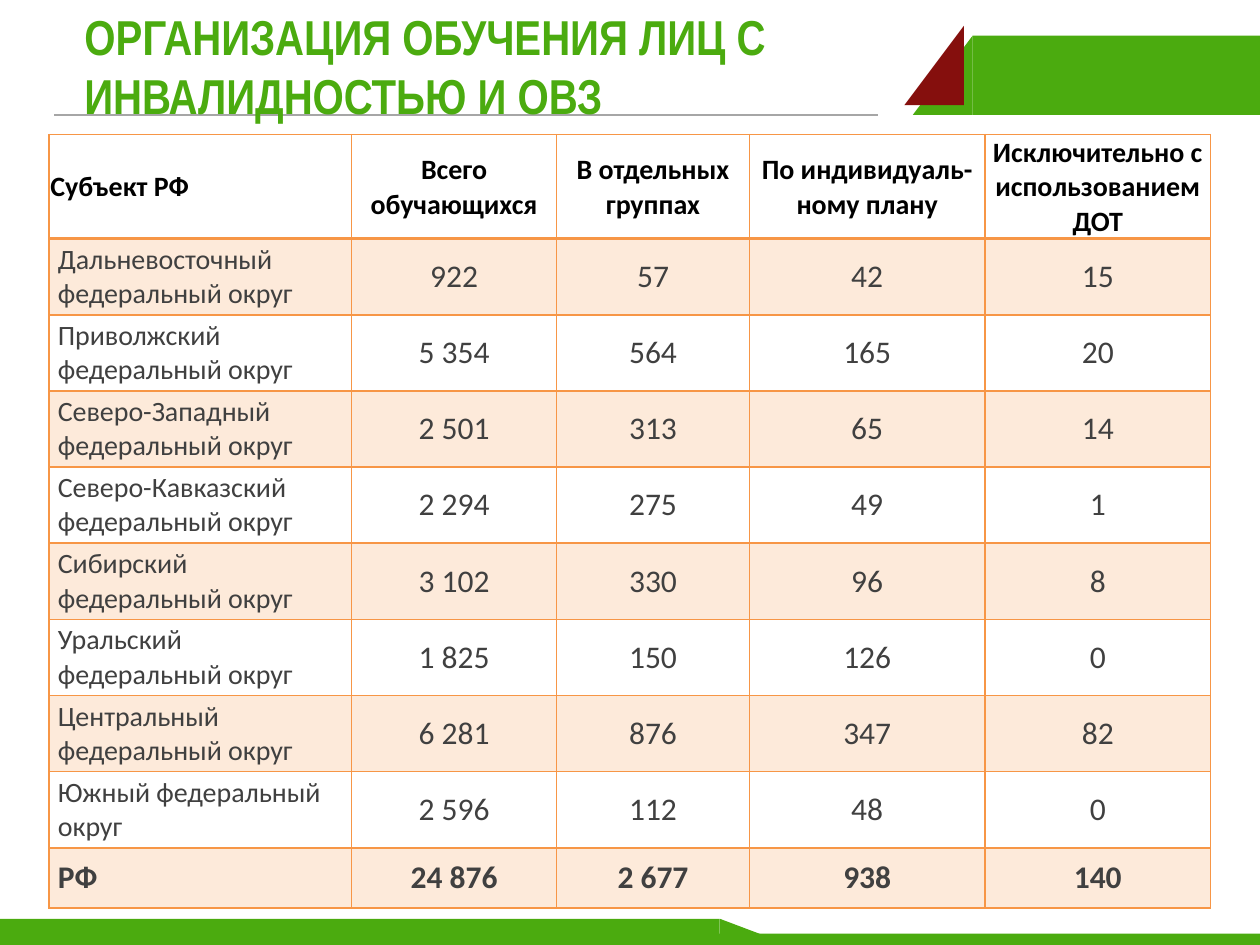
import pptx
import pptx.dml.color
import pptx.enum.shapes
import pptx.enum.text
import pptx.oxml
import pptx.oxml.ns
import pptx.util
from lxml import etree

Pt = pptx.util.Pt
RGBColor = pptx.dml.color.RGBColor
MSO_SHAPE = pptx.enum.shapes.MSO_SHAPE
PP_ALIGN = pptx.enum.text.PP_ALIGN
MSO_ANCHOR = pptx.enum.text.MSO_ANCHOR
qn = pptx.oxml.ns.qn

GREEN = RGBColor(0x4B, 0xAB, 0x0F)
DARK_RED = RGBColor(0x85, 0x0F, 0x0D)
GRAY = RGBColor(0xA6, 0xA6, 0xA6)
ORANGE = RGBColor(0xF7, 0x96, 0x46)
BLACK = RGBColor(0, 0, 0)
TEXT = RGBColor(0x40, 0x40, 0x40)

DISTRICT = " федеральный округ"
ROWS = [
    ("Субъект РФ", "Всего обучающихся", "В отдельных группах",
     "По индивидуаль-ному плану", "Исключительно с использованием ДОТ"),
    ("Дальневосточный" + DISTRICT, "922", "57", "42", "15"),
    ("Приволжский" + DISTRICT, "5 354", "564", "165", "20"),
    ("Северо-Западный" + DISTRICT, "2 501", "313", "65", "14"),
    ("Северо-Кавказский" + DISTRICT, "2 294", "275", "49", "1"),
    ("Сибирский" + DISTRICT, "3 102", "330", "96", "8"),
    ("Уральский" + DISTRICT, "1 825", "150", "126", "0"),
    ("Центральный" + DISTRICT, "6 281", "876", "347", "82"),
    ("Южный" + DISTRICT, "2 596", "112", "48", "0"),
    ("РФ", "24 876", "2 677", "938", "140"),
]
LAST = len(ROWS) - 1
COL_WIDTHS = [172.8, 117.2, 110.2, 134.6, 128.9]
ROW_HEIGHTS = [51] + [42.5] * 8 + [34.5]


def set_borders(cell, widths):
    """Draw orange borders; widths maps lnL, lnR, lnT, lnB to points."""
    tcPr = cell._tc.get_or_add_tcPr()
    for i, (side, width) in enumerate(widths.items()):
        ln = pptx.oxml.parse_xml(
            f'<a:{side} xmlns:a="http://schemas.openxmlformats.org/drawingml/2006/main"'
            f' w="{Pt(width)}"><a:solidFill><a:srgbClr val="{ORANGE}"/></a:solidFill>'
            f'</a:{side}>')
        tcPr.insert(i, ln)


prs = pptx.Presentation()
prs.slide_width, prs.slide_height = Pt(720), Pt(540)
s = prs.slides.add_slide(prs.slide_layouts[5])

# Header rule and the green and red decoration
rule = s.shapes.add_connector(pptx.enum.shapes.MSO_CONNECTOR.STRAIGHT,
                              Pt(31), Pt(65.7), Pt(502), Pt(65.7))
rule.line.color.rgb = GRAY
rule.line.width = Pt(0.75)
etree.SubElement(rule._element.spPr, qn("a:effectLst"))

RECT, TRIANGLE = MSO_SHAPE.RECTANGLE, MSO_SHAPE.RIGHT_TRIANGLE
for kind, left, top, width, height, color, flipped in [
    (RECT, 555.8, 20.4, 164.2, 45.3, GREEN, False),
    (TRIANGLE, 521.6, 20.4, 34.2, 45.3, GREEN, True),
    (RECT, 0, 525, 411.3, 15, GREEN, False),
    (TRIANGLE, 411.3, 525, 39.7, 15, GREEN, False),
    (RECT, 172.8, 533.5, 547.2, 6.5, GREEN, False),
    (TRIANGLE, 516.8, 14.8, 34, 45.3, DARK_RED, True),
]:
    sp = s.shapes.add_shape(kind, Pt(left), Pt(top), Pt(width), Pt(height))
    sp.shadow.inherit = False
    sp.fill.solid()
    sp.fill.fore_color.rgb = color
    sp.line.fill.background()
    if flipped:
        sp._element.spPr.get_or_add_xfrm().set("flipH", "1")

# Title, brought in front of the decoration
title = s.shapes.title
title.left, title.top, title.width, title.height = Pt(41), Pt(0), Pt(482.4), Pt(65.5)
s.shapes._spTree.append(title._element)
tf = title.text_frame
tf.text = "ОРГАНИЗАЦИЯ ОБУЧЕНИЯ ЛИЦ С ИНВАЛИДНОСТЬЮ И ОВЗ"
tf.word_wrap = True
tf.auto_size = pptx.enum.text.MSO_AUTO_SIZE.NONE
tf.vertical_anchor = MSO_ANCHOR.TOP
p = tf.paragraphs[0]
p.alignment = PP_ALIGN.LEFT
p.font.name = "Arial Narrow"
p.font.size = Pt(28)
p.font.bold = True
p.font.color.rgb = GREEN

# Table of students by federal district
table = s.shapes.add_table(len(ROWS), len(COL_WIDTHS), Pt(28.1), Pt(77),
                           Pt(sum(COL_WIDTHS)), Pt(sum(ROW_HEIGHTS))).table
table.first_row = table.horz_banding = False
for column, width in zip(table.columns, COL_WIDTHS):
    column.width = Pt(width)
for row, height in zip(table.rows, ROW_HEIGHTS):
    row.height = Pt(height)

for i, row in enumerate(ROWS):
    header = i == 0
    for j, text in enumerate(row):
        cell = table.cell(i, j)
        cell.text = text
        cell.vertical_anchor = MSO_ANCHOR.MIDDLE
        cell.margin_left = cell.margin_right = Pt(0.7 if header else 5)
        cell.margin_top = Pt(0.7 if header else 2.2)
        cell.margin_bottom = Pt(0 if header else 2.2)
        if i % 2:
            cell.fill.solid()
            cell.fill.fore_color.rgb = ORANGE
            color = cell._tc.tcPr.find(".//" + qn("a:srgbClr"))
            etree.SubElement(color, qn("a:alpha")).set("val", "20000")
        else:
            cell.fill.background()
        set_borders(cell, {"lnL": 1, "lnR": 1, "lnT": 2 if i == 1 else 1,
                           "lnB": 2 if header else 1})
        p = cell.text_frame.paragraphs[0]
        p.alignment = PP_ALIGN.CENTER if j else PP_ALIGN.LEFT
        p.font.name = "Calibri"
        p.font.size = Pt(18 if j and not header else 16)
        if i == LAST:
            p.font.size = Pt(18)
        p.font.bold = i in (0, LAST)
        p.font.color.rgb = BLACK if header else TEXT

prs.save("out.pptx")
